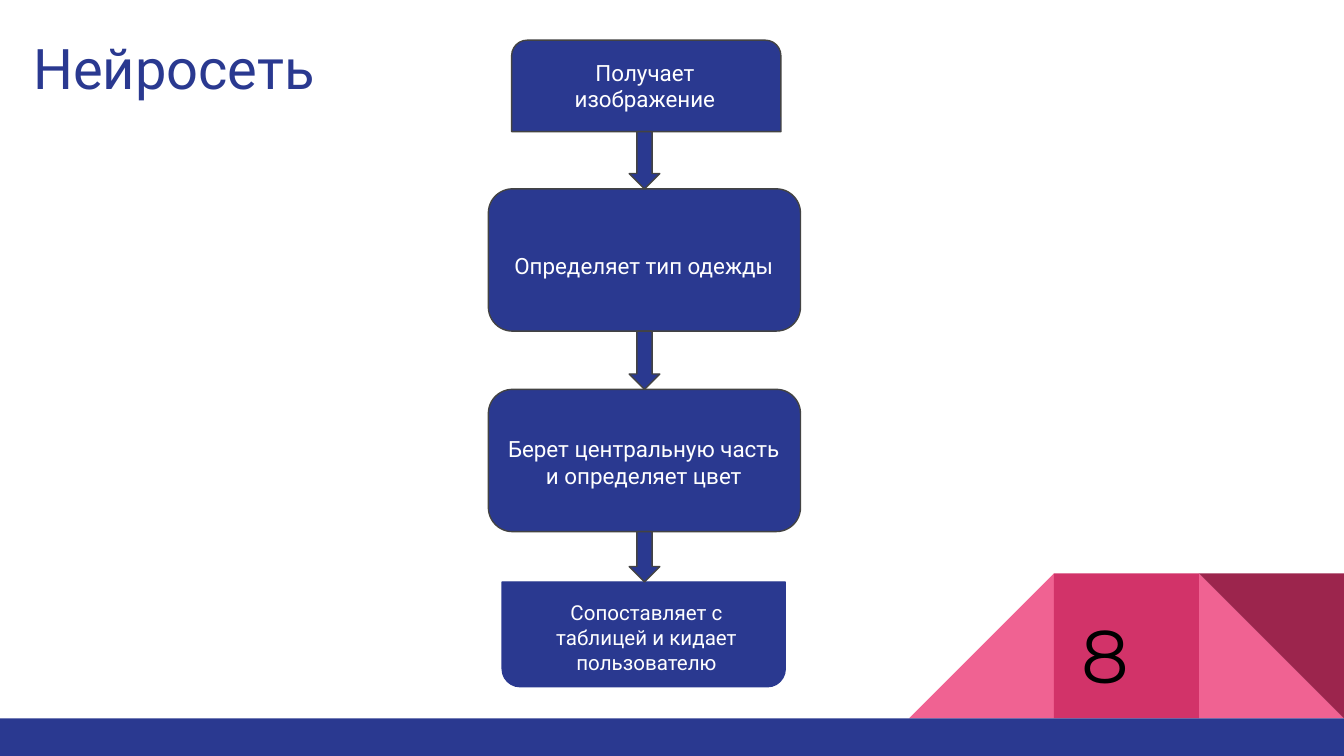
from itertools import pairwise

from pptx import Presentation
from pptx.dml.color import RGBColor
from pptx.enum.shapes import MSO_SHAPE
from pptx.enum.text import MSO_ANCHOR, MSO_AUTO_SIZE, PP_ALIGN
from pptx.util import Cm, Pt

BLUE, GREY, WHITE, BLACK = "2A3990", "434343", "FFFFFF", "000000"
PINK, CRIMSON, WINE = "F06292", "D23369", "9C254D"
WIDTH, HEIGHT = 25.4, 14.29
TILE, BAR = 2.74, 0.71
INSET = 0.25


def rgb(value):
    return RGBColor.from_string(value)


class Deck:
    font = "Roboto"

    def __init__(self):
        self.prs = Presentation()
        self.prs.slide_width = Cm(WIDTH)
        self.prs.slide_height = Cm(HEIGHT)
        self.s = self.prs.slides.add_slide(self.prs.slide_layouts[5])
        self.s.background.fill.solid()
        self.s.background.fill.fore_color.rgb = rgb(WHITE)

    def fill_text(self, sp, text, size, color, font=None, align=PP_ALIGN.LEFT,
                  inset=(INSET, INSET), grow=True):
        tf = sp.text_frame
        tf.word_wrap = True
        tf.auto_size = MSO_AUTO_SIZE.SHAPE_TO_FIT_TEXT if grow else MSO_AUTO_SIZE.NONE
        tf.vertical_anchor = MSO_ANCHOR.TOP
        tf.margin_left = tf.margin_right = Cm(inset[0])
        tf.margin_top = tf.margin_bottom = Cm(inset[1])
        p = tf.paragraphs[0]
        p.alignment = align
        r = p.add_run()
        r.text = text
        r.font.size = Pt(size)
        r.font.name = font or self.font
        r.font.color.rgb = rgb(color)

    def title(self, box, text):
        sp = self.s.shapes.title
        sp.left, sp.top, sp.width, sp.height = map(Cm, box)
        self.fill_text(sp, text, 30, BLUE, grow=False)

    def text(self, box, text, size, color=WHITE, **style):
        sp = self.s.shapes.add_textbox(*map(Cm, box))
        self.fill_text(sp, text, size, color, **style)

    def shape(self, kind, box, fill, line=None, adj=(), rotation=0, mirror=False):
        sp = self.s.shapes.add_shape(kind, *map(Cm, box))
        sp.shadow.inherit = False
        sp.fill.solid()
        sp.fill.fore_color.rgb = rgb(fill)
        if line:
            sp.line.color.rgb = rgb(line)
            sp.line.width = Pt(0.75)
        else:
            sp.line.fill.background()
        for i, value in enumerate(adj):
            sp.adjustments[i] = value
        sp.rotation = rotation
        if mirror:
            sp._element.spPr.get_or_add_xfrm().set("flipH", "1")

    def down_arrow(self, x, top, bottom, thickness=0.58):
        length = bottom - top
        box = (x - length / 2, (top + bottom - thickness) / 2, length, thickness)
        self.shape(MSO_SHAPE.RIGHT_ARROW, box, BLUE, GREY, (0.5, 0.5), 90)


def main():
    deck = Deck()

    bar_top = HEIGHT - BAR
    tiles = [
        (1, MSO_SHAPE.RIGHT_TRIANGLE, PINK, {}),
        (3, MSO_SHAPE.RIGHT_TRIANGLE, PINK, {"mirror": True}),
        (2, MSO_SHAPE.RECTANGLE, CRIMSON, {}),
        (1, MSO_SHAPE.RIGHT_TRIANGLE, WINE, {"rotation": 180}),
    ]
    for column, kind, fill, turn in tiles:
        box = (WIDTH - column * TILE, bar_top - TILE, TILE, TILE)
        deck.shape(kind, box, fill, **turn)
    deck.shape(MSO_SHAPE.RECTANGLE, (0, bar_top, WIDTH, BAR), BLUE)

    deck.title((0.38, 0.38, 8.38, 2.69), "Нейросеть")

    full, half = MSO_SHAPE.ROUNDED_RECTANGLE, MSO_SHAPE.ROUND_2_SAME_RECTANGLE
    steps = [
        (half, (9.67, 0.76, 5.09, 1.73), GREY, (0.17, 0), 0,
         "Получает изображение", (9.75, 0.86, 4.88, 1.55), 12),
        (full, (9.23, 3.57, 5.9, 2.69), GREY, (0.17,), 0,
         "Определяет тип одежды", (9.22, 4.52, 5.9, 1.02), 12),
        (full, (9.23, 7.36, 5.9, 2.69), GREY, (0.17,), 0,
         "Берет центральную часть и определяет цвет", (9.22, 7.98, 5.9, 1.55), 12),
        (half, (9.49, 11, 5.35, 1.98), BLUE, (0.17, 0), 180,
         "Сопоставляет с таблицей и кидает пользователю", (10.19, 11.1, 4.06, 1.93), 11),
    ]
    for kind, box, line, adj, rotation, label, label_box, size in steps:
        deck.shape(kind, box, BLUE, line, adj, rotation)
        deck.text(label_box, label, size, align=PP_ALIGN.CENTER)

    for upper, lower in pairwise(step[1] for step in steps):
        deck.down_arrow(12.18, upper[1] + upper[3], lower[1])

    deck.text((20.19, 11.38, 1.96, 1.96), "8", 40, BLACK,
              font="Montserrat", inset=(0.25, 0.13))

    deck.prs.save("out.pptx")


if __name__ == "__main__":
    main()
